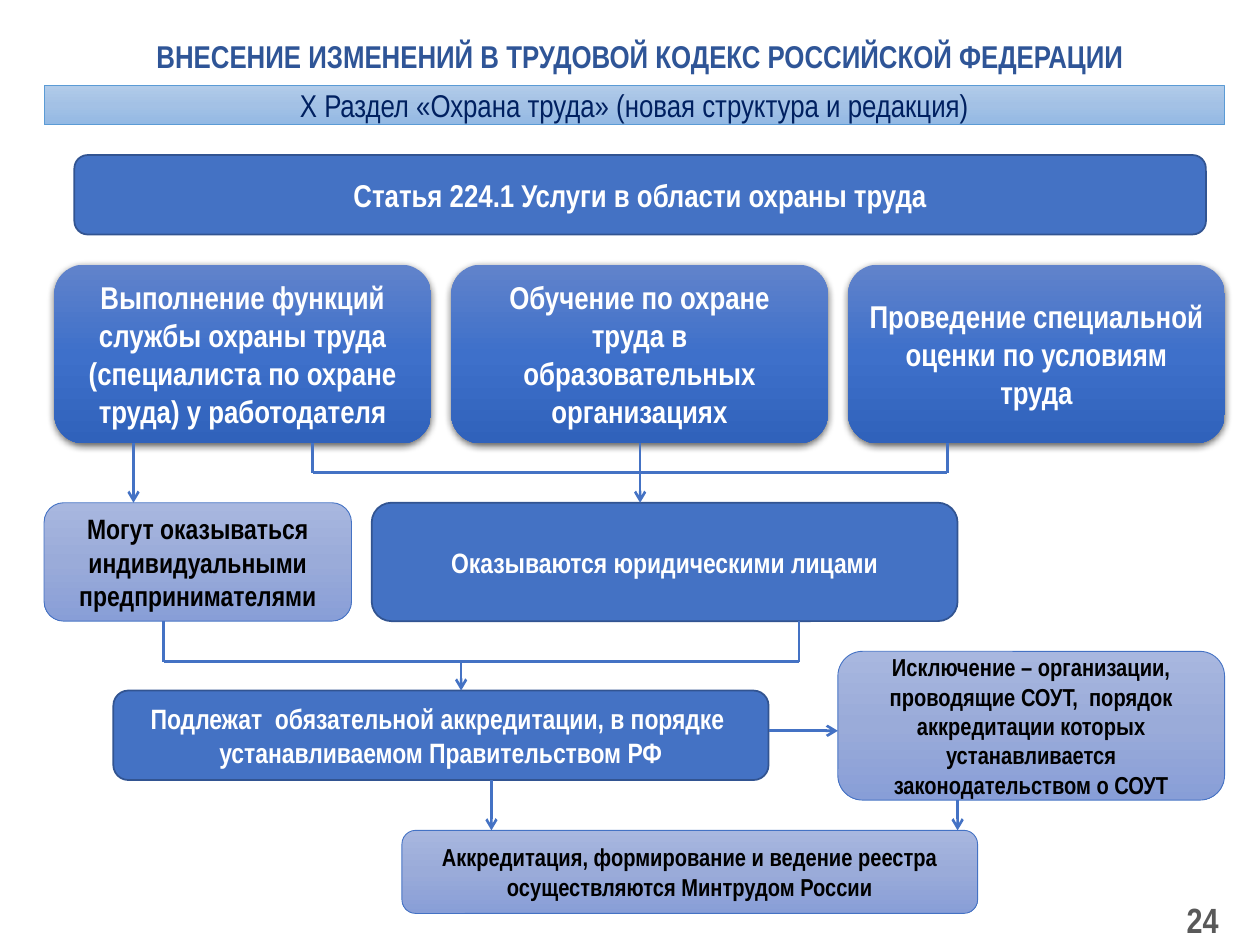
import copy
from dataclasses import dataclass

import lxml.etree
import pptx
import pptx.dml.color
import pptx.enum.shapes
import pptx.enum.text
import pptx.oxml
import pptx.oxml.ns
import pptx.util

Pt = pptx.util.Pt
qn = pptx.oxml.ns.qn
SHAPE = pptx.enum.shapes.MSO_SHAPE
ALIGN = pptx.enum.text.PP_ALIGN


@dataclass(frozen=True)
class Theme:
    font: str = "Arial Narrow"
    blue: str = "4472C4"
    dark_blue: str = "325491"
    banner_line: str = "5B9BD5"
    title: str = "2F5597"
    navy: str = "002060"
    grey: str = "595959"
    white: str = "FFFFFF"
    black: str = "000000"
    banner_fill: tuple = ("B1CBE9", "A3C1E5", "93B9E4")
    card_fill: tuple = ("6183CB", "3E70CA", "3062BB")
    pale_fill: tuple = ("A8B7DF", "9AABD9", "889ED7")
    number: int = 20
    large: int = 18
    medium: int = 16
    small: int = 14


THEME = Theme()


def rgb(color):
    return pptx.dml.color.RGBColor.from_string(color)


def write_text(box, text, *, size, color, bold=True, align=ALIGN.CENTER):
    frame = box.text_frame
    frame.word_wrap = True
    frame.vertical_anchor = pptx.enum.text.MSO_ANCHOR.MIDDLE
    para = frame.paragraphs[0]
    para.alignment = align
    span = para.add_run()
    span.text = text
    span.font.name = THEME.font
    span.font.size = Pt(size)
    span.font.bold = bold
    span.font.color.rgb = rgb(color)


def add_label(page, area, text, **text_format):
    box = page.shapes.add_textbox(*map(Pt, area))
    write_text(box, text, **text_format)


def fill_gradient(box, colors):
    """Fill from top to bottom with evenly spaced colours."""
    box.fill.gradient()
    box.fill.gradient_angle = 270
    stops = box.fill.gradient_stops
    first = box._element.spPr.find(".//" + qn("a:gs"))
    for _ in range(len(colors) - len(stops)):
        first.addnext(copy.deepcopy(first))
    for index, (stop, color) in enumerate(zip(box.fill.gradient_stops, colors)):
        stop.position = index / (len(colors) - 1)
        stop.color.rgb = rgb(color)


def add_drop_shadow(box):
    effects = box._element.spPr.find(qn("a:effectLst"))
    shadow = lxml.etree.SubElement(
        effects, qn("a:outerShdw"), blurRad=str(Pt(4.5)), dist=str(Pt(1.5)),
        dir="5400000", algn="ctr", rotWithShape="0")
    color = lxml.etree.SubElement(shadow, qn("a:srgbClr"), val=THEME.black)
    lxml.etree.SubElement(color, qn("a:alpha"), val="63000")


def add_panel(page, area, text, *, fill, line=None, width=1,
              kind=SHAPE.ROUNDED_RECTANGLE, **text_format):
    box = page.shapes.add_shape(kind, *map(Pt, area))
    box.shadow.inherit = False
    if isinstance(fill, tuple):
        fill_gradient(box, fill)
    else:
        box.fill.solid()
        box.fill.fore_color.rgb = rgb(fill)
    if line:
        box.line.color.rgb = rgb(line)
        box.line.width = Pt(width)
    else:
        box.line.fill.background()
    write_text(box, text, **text_format)
    return box


def add_solid_panel(page, area, text, size):
    add_panel(page, area, text, fill=THEME.blue, line=THEME.dark_blue,
              size=size, color=THEME.white)


def add_pale_panel(page, area, text, size):
    add_panel(page, area, text, fill=THEME.pale_fill, line=THEME.blue,
              width=0.5, size=size, color=THEME.black)


def add_cards(page, texts):
    for column, text in enumerate(texts):
        card = add_panel(page, (31 + 226.8 * column, 151.2, 215.3, 102.2), text,
                         fill=THEME.card_fill, size=THEME.large, color=THEME.white)
        add_drop_shadow(card)


def add_line(page, x1, y1, x2, y2, arrow=False):
    line = page.shapes.add_connector(
        pptx.enum.shapes.MSO_CONNECTOR.STRAIGHT, *map(Pt, (x1, y1, x2, y2)))
    line.line.color.rgb = rgb(THEME.blue)
    line.line.width = Pt(1.5)
    if arrow:
        lxml.etree.SubElement(line.line._get_or_add_ln(), qn("a:tailEnd"), type="arrow")
    lxml.etree.SubElement(line._element.spPr, qn("a:effectLst"))


def add_bus(page, left, right, middle, top, level, bottom):
    """Join two stems on one level, with an arrow down from it."""
    for x in (left, right):
        add_line(page, x, top, x, level)
    add_line(page, left, level, right, level)
    add_line(page, middle, level, middle, bottom, arrow=True)


def main():
    deck = pptx.Presentation()
    deck.slide_width, deck.slide_height = Pt(720), Pt(540)
    page = deck.slides.add_slide(deck.slide_layouts[6])

    add_label(page, (535.7, 511.2, 167.8, 28.8), "24", size=THEME.number,
              color=THEME.grey, align=ALIGN.RIGHT)
    add_label(page, (59.8, 9.4, 612, 45.4),
              "ВНЕСЕНИЕ ИЗМЕНЕНИЙ В ТРУДОВОЙ КОДЕКС РОССИЙСКОЙ ФЕДЕРАЦИИ",
              size=THEME.large, color=THEME.title)
    add_panel(page, (25.2, 49, 674.6, 22.3),
              "Х Раздел «Охрана труда» (новая структура и редакция)",
              fill=THEME.banner_fill, line=THEME.banner_line, width=0.5,
              kind=SHAPE.RECTANGLE, size=THEME.large, color=THEME.navy, bold=False)
    add_solid_panel(page, (42.5, 88.6, 646.6, 45.4),
                    "Статья 224.1 Услуги в области охраны труда", THEME.large)
    add_cards(page, (
        "Выполнение функций службы охраны труда (специалиста по охране труда) "
        "у работодателя",
        "Обучение по охране труда в образовательных организациях",
        "Проведение специальной оценки по условиям труда",
    ))

    add_pale_panel(page, (25.2, 287.3, 175.7, 67.7),
                   "Могут оказываться индивидуальными предпринимателями", THEME.medium)
    add_solid_panel(page, (212.4, 287.3, 334.8, 67.7),
                    "Оказываются юридическими лицами", THEME.medium)
    add_solid_panel(page, (64.8, 394.6, 374.4, 51.1),
                    "Подлежат  обязательной аккредитации, в порядке  "
                    "устанавливаемом Правительством РФ", THEME.medium)
    add_pale_panel(page, (478.8, 372.2, 221, 85),
                   "Исключение – организации, проводящие СОУТ,  порядок аккредитации "
                   "которых устанавливается законодательством о СОУТ", THEME.small)
    add_pale_panel(page, (229.7, 474.5, 329, 47.5),
                   "Аккредитация, формирование и ведение реестра осуществляются "
                   "Минтрудом России", THEME.small)

    add_bus(page, 178.6, 541.4, 365.8, top=253.4, level=270, bottom=287.3)
    add_line(page, 365.8, 253.4, 365.8, 270)
    add_bus(page, 93.6, 456.5, 263.5, top=355, level=378, bottom=394.6)
    for ends in ((76.3, 253.4, 76.3, 287.3), (439.2, 417.6, 478.8, 417.6),
                 (280.8, 445.7, 280.8, 474.5), (547.2, 457.2, 547.2, 474.5)):
        add_line(page, *ends, arrow=True)

    deck.save("out.pptx")


if __name__ == "__main__":
    main()
